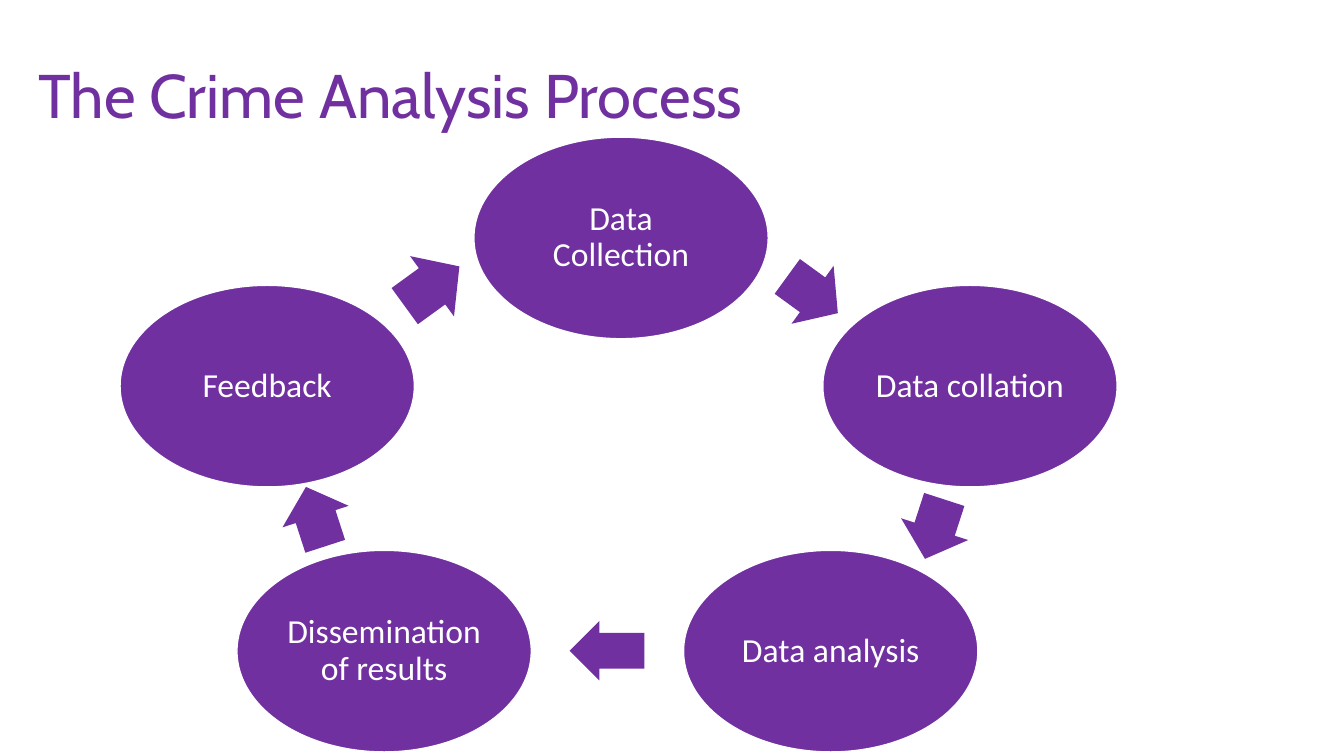
from pptx import Presentation
from pptx.dml.color import RGBColor
from pptx.enum.shapes import MSO_SHAPE
from pptx.enum.text import MSO_ANCHOR, PP_ALIGN
from pptx.util import Inches, Pt

HUES = {"plum": "7030A0", "white": "FFFFFF"}
STEPS = [
    ("Data Collection", 46.21, 31.47),
    ("Data collation", 72.17, 51.07),
    ("Data analysis", 61.81, 86.13),
    ("Dissemination of results", 28.58, 86.13),
    ("Feedback", 19.88, 51.07),
]
ARROWS = [
    (60.46, 39, 4.65, 9.47),
    (69.54, 70, 4.65, 9.33),
    (45.16, 86.07, 5.55, 7.87),
    (23.48, 68.33, 4.65, 9.2),
    (32.15, 37.87, 5.03, 9.87),
]


class Deck:
    """Draw styled elements on a slide, placed by percent of its size."""

    def __init__(self):
        self.prs = Presentation()
        self.prs.slide_width = Inches(13.33)
        self.prs.slide_height = Inches(7.5)
        self.slide = self.prs.slides.add_slide(self.prs.slide_layouts[6])

    def hue(self, name):
        return RGBColor.from_string(HUES[name])

    def box(self, left, top, wide, high):
        across, down = self.prs.slide_width / 100, self.prs.slide_height / 100
        return (round(left * across), round(top * down),
                round(wide * across), round(high * down))

    def label(self, shape, text, font, size, hue, align):
        frame = shape.text_frame
        frame.word_wrap = True
        frame.vertical_anchor = MSO_ANCHOR.MIDDLE
        para = frame.paragraphs[0]
        para.alignment = align
        para.line_spacing = 0.9
        run = para.add_run()
        run.text = text
        run.font.name = font
        run.font.size = Pt(size)
        run.font.color.rgb = self.hue(hue)
        return frame

    def title(self, text, *place):
        shape = self.slide.shapes.add_textbox(*self.box(*place))
        self.label(shape, text, "Cabin", 44, "plum", PP_ALIGN.LEFT)

    def shape(self, kind, x, y, wide, high):
        place = self.box(x - wide / 2, y - high / 2, wide, high)
        shape = self.slide.shapes.add_shape(kind, *place)
        shape.shadow.inherit = False
        shape.fill.solid()
        shape.fill.fore_color.rgb = self.hue("plum")
        shape.line.fill.background()
        return shape

    def step(self, text, x, y):
        oval = self.shape(MSO_SHAPE.OVAL, x, y, 21.9, 26.67)
        oval.line.color.rgb = self.hue("white")
        oval.line.width = Pt(1)
        frame = self.label(oval, text, "Calibri", 24, "white", PP_ALIGN.CENTER)
        frame.margin_left = frame.margin_right = Inches(0.02)
        frame.margin_top = frame.margin_bottom = Inches(0.02)

    def arrow(self, turn, x, y, wide, high):
        arrow = self.shape(MSO_SHAPE.RIGHT_ARROW, x, y, wide, high)
        arrow.adjustments[0] = 0.6
        arrow.adjustments[1] = 0.5
        arrow.rotation = turn


def main():
    deck = Deck()
    deck.title("The Crime Analysis Process", 2.1, 3.33, 86.27, 19.33)
    for i, (step, arrow) in enumerate(zip(STEPS, ARROWS)):
        deck.step(*step)
        deck.arrow(36 + 72 * i, *arrow)
    deck.prs.save("out.pptx")


if __name__ == "__main__":
    main()
